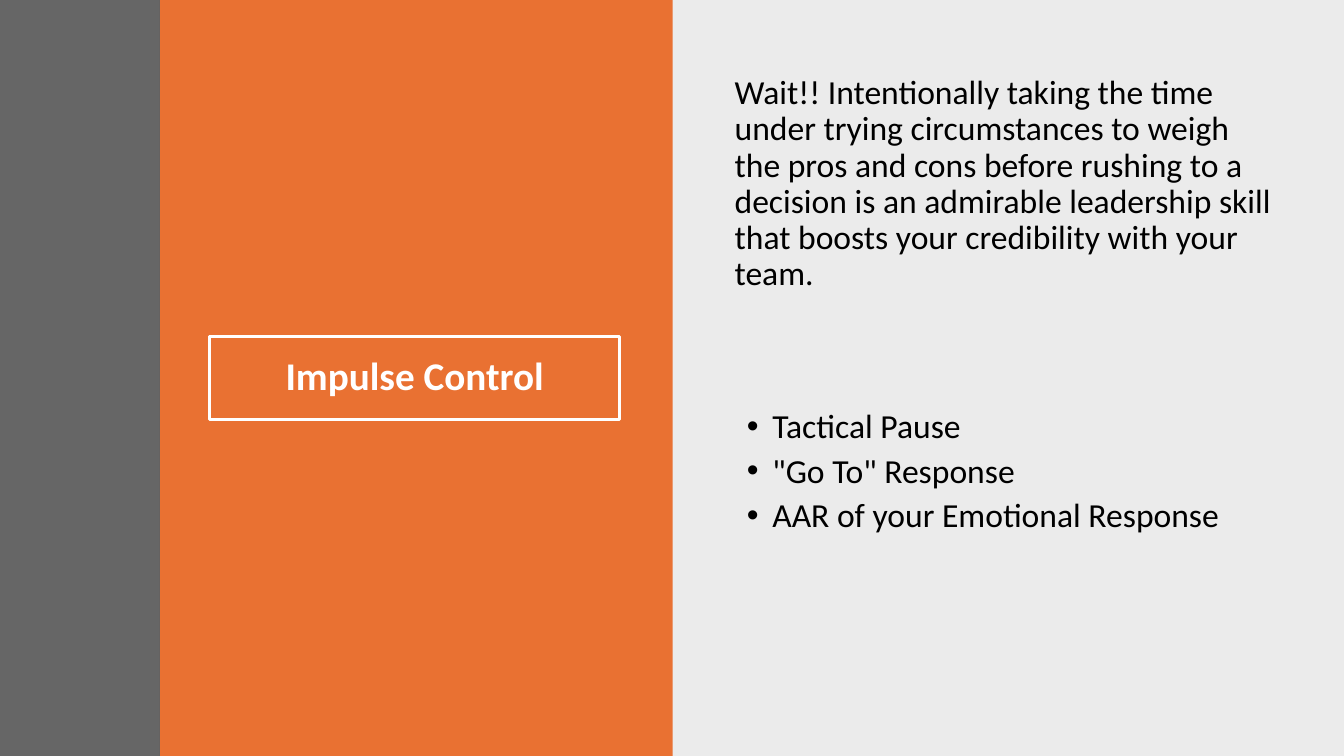
from dataclasses import dataclass
from lxml.etree import SubElement
from pptx import Presentation
from pptx.dml.color import RGBColor
from pptx.enum.shapes import MSO_SHAPE
from pptx.enum.text import MSO_ANCHOR, MSO_AUTO_SIZE, PP_ALIGN
from pptx.oxml.ns import qn
from pptx.util import Cm, Pt


@dataclass(frozen=True)
class Theme:
    font: str = "Calibri"
    gray: str = "404040"
    orange: str = "E97132"
    black: str = "000000"
    white: str = "FFFFFF"
    head: int = 28
    body: int = 24


theme = Theme()
WIDE, HIGH = 33.87, 19.05


def apply(item, values):
    for name, value in values.items():
        setattr(item, name, value)


def place(shape, box):
    names = ("left", "top", "width", "height")
    apply(shape, dict(zip(names, map(Cm, box))))


def style(font, size, color, bold=False):
    apply(font, {"name": theme.font, "size": Pt(size), "bold": bold})
    font.color.rgb = RGBColor.from_string(color)


def add_panel(slide, box, color, alpha=100):
    panel = slide.shapes.add_shape(MSO_SHAPE.RECTANGLE, *map(Cm, box))
    panel.shadow.inherit = False
    panel.line.fill.background()
    panel.fill.solid()
    panel.fill.fore_color.rgb = RGBColor.from_string(color)
    if alpha < 100:
        tint = panel.element.spPr.find(".//" + qn("a:srgbClr"))
        SubElement(tint, qn("a:alpha"), val=str(alpha * 1000))


def add_title(slide, box, text):
    left, top, width, height = box
    add_panel(slide, box, theme.orange)
    title = slide.shapes.title
    title.element.getparent().append(title.element)
    deep = 2.11
    place(title, (left + 1.25, top + (height - deep) / 2, width - 2.58, deep))
    title.line.color.rgb = RGBColor.from_string(theme.white)
    title.line.width = Pt(2)
    title.text = text
    apply(title.text_frame, {
        "word_wrap": True,
        "auto_size": MSO_AUTO_SIZE.NONE,
        "vertical_anchor": MSO_ANCHOR.MIDDLE,
    })
    para = title.text_frame.paragraphs[0]
    apply(para, {"alignment": PP_ALIGN.CENTER, "line_spacing": 0.9})
    style(para.runs[0].font, theme.head, theme.white, True)


def add_text(slide, box, lines, form, bullet=False):
    frame = slide.shapes.add_textbox(*map(Cm, box)).text_frame
    frame.word_wrap = True
    frame.text = "\n".join(lines)
    for para in frame.paragraphs:
        apply(para, {"line_spacing": 0.9, **form})
        style(para.runs[0].font, theme.body, theme.black)
        if bullet:
            props = para._p.get_or_add_pPr()
            props.set("marL", str(Cm(0.95)))
            props.set("indent", str(Cm(-0.64)))
            SubElement(props, qn("a:buFont"), typeface="Arial")
            SubElement(props, qn("a:buChar"), char="•")


def add_notes(slide, box, intro, points):
    left, top, width, height = box
    add_panel(slide, box, theme.black, 8)
    column = left + 1.33
    span, deep = 14.05, 7.09
    add_text(slide, (column, top + 1.78, span, deep), [intro],
             {"space_before": Pt(10)})
    add_text(slide, (column, top + 10.19, span, deep), points,
             {"space_after": Pt(6)}, True)


def main():
    deck = Presentation()
    apply(deck, {"slide_width": Cm(WIDE), "slide_height": Cm(HIGH)})
    slide = deck.slides.add_slide(deck.slide_layouts[5])
    edge, mid = 4.03, WIDE / 2
    add_notes(
        slide, (mid, 0, WIDE - mid, HIGH),
        "Wait!! Intentionally taking the time under trying circumstances "
        "to weigh the pros and cons before rushing to a decision is an "
        "admirable leadership skill that boosts your credibility with "
        "your team.",
        ["Tactical Pause", '"Go To" Response',
         "AAR of your Emotional Response"])
    add_title(slide, (edge, 0, 12.92, HIGH), "Impulse Control")
    add_panel(slide, (0, 0, edge, HIGH), theme.gray, 80)
    deck.save("out.pptx")


if __name__ == "__main__":
    main()
